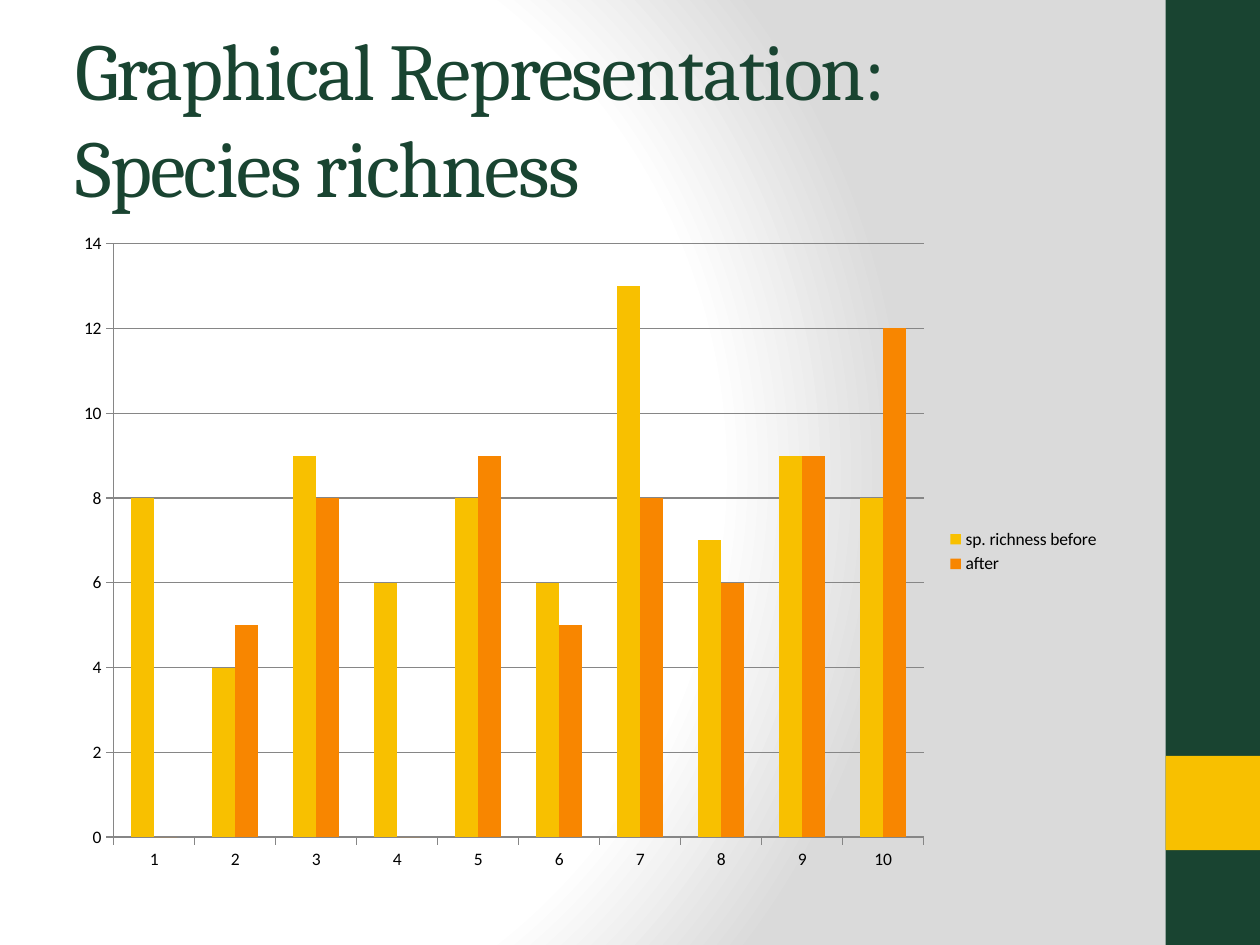
import pptx
import pptx.chart.data
import pptx.dml.color
import pptx.enum.chart
import pptx.enum.shapes
import pptx.enum.text
import pptx.oxml
import pptx.oxml.ns
import pptx.util

Cm = pptx.util.Cm
Pt = pptx.util.Pt
HUES = {"green": "194431", "gold": "F8C000", "orange": "F88600",
        "white": "FFFFFF", "grey": "DADADA", "line": "868686", "black": "000000"}


def color(name):
    return pptx.dml.color.RGBColor.from_string(HUES[name])


def write(frame, text, size=18, font="Calibri", hue="black", space=0):
    run = frame.paragraphs[0].add_run()
    run.text = text
    run.font.size = Pt(size)
    run.font.name = font
    run.font.color.rgb = color(hue)
    run.font._element.set("spc", str(space * 100))


class Deck:
    """Hold the style and the current slide."""

    def __init__(self, show):
        self.body = "Calibri"
        self.head = "Cambria"
        self.slide = show.slides.add_slide(show.slide_layouts[6])

    def back(self, stops, focus):
        self.slide.background.fill.gradient()
        grad = self.slide.element.find(".//" + pptx.oxml.ns.qn("a:gradFill"))
        marks = "".join(
            f'<a:gs pos="{pos * 1000}"><a:srgbClr val="{HUES[hue]}"/></a:gs>'
            for pos, hue in stops)
        sides = " ".join(f'{side}="{part * 1000}"' for side, part in zip("ltrb", focus))
        fresh = pptx.oxml.parse_xml(
            f'<a:gradFill {pptx.oxml.ns.nsdecls("a")} rotWithShape="1">'
            f'<a:gsLst>{marks}</a:gsLst>'
            f'<a:path path="circle"><a:fillToRect {sides}/></a:path></a:gradFill>')
        grad.getparent().replace(grad, fresh)

    def rect(self, box, hue):
        kind = pptx.enum.shapes.MSO_SHAPE.RECTANGLE
        shape = self.slide.shapes.add_shape(kind, *map(Cm, box))
        shape.shadow.inherit = False
        shape.fill.solid()
        shape.fill.fore_color.rgb = color(hue)
        shape.line.fill.background()

    def title(self, box, text):
        frame = self.slide.shapes.add_textbox(*map(Cm, box)).text_frame
        frame.word_wrap = True
        frame.vertical_anchor = pptx.enum.text.MSO_ANCHOR.MIDDLE
        write(frame, text, size=46, font=self.head, hue="green", space=-1)

    def chart(self, box, cats, rows):
        enum = pptx.enum.chart
        data = pptx.chart.data.CategoryChartData()
        data.categories = cats
        for name, _, vals in rows:
            data.add_series(name, vals)
        chart = self.slide.shapes.add_chart(
            enum.XL_CHART_TYPE.COLUMN_CLUSTERED, *map(Cm, box), data).chart
        chart.font.size = Pt(10)
        chart.font.name = self.body
        chart.font.color.rgb = color("black")
        chart.has_title = False
        chart.has_legend = True
        chart.legend.position = enum.XL_LEGEND_POSITION.RIGHT
        chart.legend.include_in_layout = False
        plot = chart.plots[0]
        plot.vary_by_categories = False
        plot.gap_width = 150
        for bars, (_, hue, _) in zip(plot.series, rows):
            bars.format.fill.solid()
            bars.format.fill.fore_color.rgb = color(hue)
        axis = chart.value_axis
        axis.has_major_gridlines = True
        axis.minimum_scale, axis.maximum_scale, axis.major_unit = 0, 14, 2
        for part in (axis, chart.category_axis):
            part.major_tick_mark = enum.XL_TICK_MARK.OUTSIDE
        for part in (axis, chart.category_axis, axis.major_gridlines):
            part.format.line.width = Pt(0.75)
            part.format.line.color.rgb = color("line")


def main():
    show = pptx.Presentation()
    show.slide_width, show.slide_height = Cm(25.4), Cm(19.05)
    deck = Deck(show)
    deck.back([(0, "white"), (75, "white"), (100, "grey")], (20, 50, 100, 50))
    deck.rect((23.5, 0, 1.9, 19.05), "green")
    deck.rect((23.5, 15.24, 1.9, 1.9), "gold")
    deck.title((1.27, 0.76, 21.16, 3.18), "Graphical Representation: Species richness")
    deck.chart((1.27, 4.45, 21.16, 13.34), [str(n) for n in range(1, 11)], [
        ("sp. richness before", "gold", (8, 4, 9, 6, 8, 6, 13, 7, 9, 8)),
        ("after", "orange", (0, 5, 8, 0, 9, 5, 8, 6, 9, 12)),
    ])
    show.save("out.pptx")


if __name__ == "__main__":
    main()
